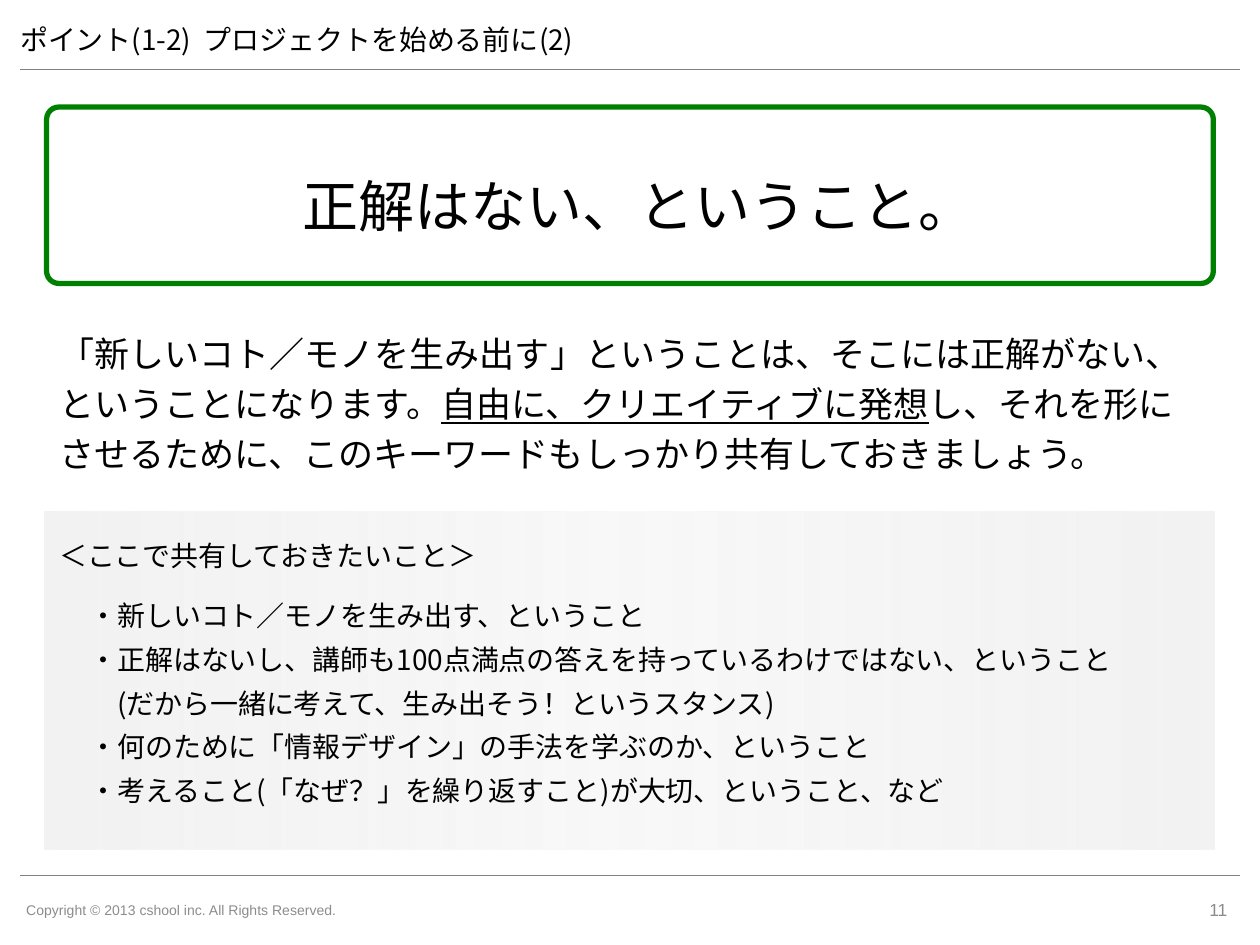
from copy import deepcopy

from pptx import Presentation
from pptx.dml.color import RGBColor
from pptx.enum.shapes import MSO_CONNECTOR as Connector, MSO_SHAPE as Shape
from pptx.enum.text import MSO_ANCHOR as Anchor, MSO_AUTO_SIZE as AutoSize, PP_ALIGN as Align
from pptx.oxml.ns import qn
from pptx.util import Inches, Pt

COLORS = {"ink": "000000", "muted": "8C8C8C", "rule": "808080",
          "frame": "008000", "paper": "FFFFFF", "panel": "F2F2F2"}
JAPANESE = "Noto Sans CJK JP"
PLAIN = (0.1, 0.05, 0.1, 0.05)
ROOMY = (0.12, 0.08, 0.12, 0.08)


class SlideBuilder:
    """Holds the style and the current slide, and draws each kind of element."""

    def __init__(self, deck):
        self.slide = deck.slides.add_slide(deck.slide_layouts[5])

    def color(self, name):
        return RGBColor.from_string(COLORS[name])

    def place(self, shape, box):
        for side, length in zip(("left", "top", "width", "height"), box):
            setattr(shape, side, Inches(length))

    def set_text(self, shape, paragraphs, size, font=JAPANESE, color="ink", align=Align.LEFT,
                 spacing=1.0, insets=PLAIN, **frame_format):
        frame = shape.text_frame
        sides = ("margin_left", "margin_top", "margin_right", "margin_bottom")
        settings = {"word_wrap": True, "auto_size": AutoSize.NONE,
                    "vertical_anchor": Anchor.MIDDLE,
                    **dict(zip(sides, map(Inches, insets))), **frame_format}
        for name, value in settings.items():
            setattr(frame, name, value)
        for index, runs in enumerate(paragraphs):
            paragraph = frame.add_paragraph() if index else frame.paragraphs[0]
            paragraph.alignment = align
            paragraph.line_spacing = spacing
            for wording, underline in runs:
                run = paragraph.add_run()
                run.text = wording
                for name, value in {"size": Pt(size), "name": font,
                                    "underline": underline}.items():
                    setattr(run.font, name, value)
                run.font.color.rgb = self.color(color)
                properties = run._r.get_or_add_rPr()
                properties.append(properties.makeelement(qn("a:ea"), {"typeface": font}))
        return frame

    def title(self, box, wording, size):
        heading = self.slide.shapes.title
        self.place(heading, box)
        self.set_text(heading, [[(wording, False)]], size)

    def text(self, box, paragraphs, size, **style):
        area = self.slide.shapes.add_textbox(*map(Inches, box))
        return self.set_text(area, paragraphs, size, **style)

    def rule(self, y):
        line = self.slide.shapes.add_connector(
            Connector.STRAIGHT, *map(Inches, (0.16, y, 9.84, y)))
        line.line.color.rgb = self.color("rule")
        line.line.width = Pt(0.75)
        properties = line._element.spPr
        properties.append(properties.makeelement(qn("a:effectLst"), {}))

    def framed_message(self, box, wording, size):
        frame = self.slide.shapes.add_shape(Shape.ROUNDED_RECTANGLE, *map(Inches, box))
        frame.shadow.inherit = False
        frame.adjustments[0] = 0.07
        frame.fill.solid()
        frame.fill.fore_color.rgb = self.color("paper")
        frame.line.color.rgb = self.color("frame")
        frame.line.width = Pt(3)
        self.set_text(frame, [[(wording, False)]], size, align=Align.CENTER, spacing=1.3,
                      insets=(0.24, 0.05, 0.1, 0.05))

    def faded_panel(self, box):
        panel = self.slide.shapes.add_shape(Shape.RECTANGLE, *map(Inches, box))
        panel.shadow.inherit = False
        panel.line.fill.background()
        panel.fill.gradient()
        panel.fill.gradient_angle = 0
        for stop in panel.fill.gradient_stops:
            stop.color.rgb = self.color("panel")
        stops = panel._element.spPr.find(".//" + qn("a:gsLst"))
        middle = deepcopy(stops[0])
        middle.set("pos", "50000")
        middle[0].append(middle.makeelement(qn("a:alpha"), {"val": "50000"}))
        stops.insert(1, middle)


def main():
    deck = Presentation()
    deck.slide_width, deck.slide_height = Inches(10), Inches(7.5)
    builder = SlideBuilder(deck)

    for y in (6.95, 0.55):
        builder.rule(y)
    builder.title((0.06, 0.08, 8.92, 0.47), "ポイント(1-2)  プロジェクトを始める前に(2)", 16)
    footer = {"font": "Arial", "color": "muted"}
    builder.text((9.09, 7.02, 0.75, 0.4), [[("11", False)]], 10, align=Align.RIGHT, **footer)
    builder.text((0.11, 7.02, 3.17, 0.4),
                 [[("Copyright © 2013 cshool inc. All Rights Reserved.", False)]], 8, **footer)

    builder.framed_message((0.37, 0.85, 9.26, 1.4), "正解はない、ということ。", 32)
    explanation = [
        ("「新しいコト／モノを生み出す」ということは、そこには正解がない、ということになります。", False),
        ("自由に、クリエイティブに発想", True),
        ("し、それを形にさせるために、このキーワードもしっかり共有しておきましょう。", False),
    ]
    builder.text((0.35, 2.49, 9.29, 1.36), [explanation], 20, spacing=1.2, insets=ROOMY,
                 vertical_anchor=Anchor.TOP)

    builder.faded_panel((0.35, 4.06, 9.29, 2.68))
    sharing = {"spacing": 1.3, "insets": ROOMY, "word_wrap": False}
    builder.text((0.35, 4.12, 3.6, 0.5), [[("＜ここで共有しておきたいこと＞", False)]], 16, **sharing)
    points = [
        "・新しいコト／モノを生み出す、ということ",
        "・正解はないし、講師も100点満点の答えを持っているわけではない、ということ",
        "(だから一緒に考えて、生み出そう！というスタンス)",
        "・何のために「情報デザイン」の手法を学ぶのか、ということ",
        "・考えること(「なぜ？」を繰り返すこと)が大切、ということ、など",
    ]
    point_list = builder.text((0.59, 4.59, 8.6, 1.9), [[(point, False)] for point in points],
                              16, **sharing)
    aside = point_list.paragraphs[2]._p.get_or_add_pPr()
    aside.set("marL", str(Inches(0.22)))
    aside.set("indent", "0")

    deck.save("out.pptx")


if __name__ == "__main__":
    main()
